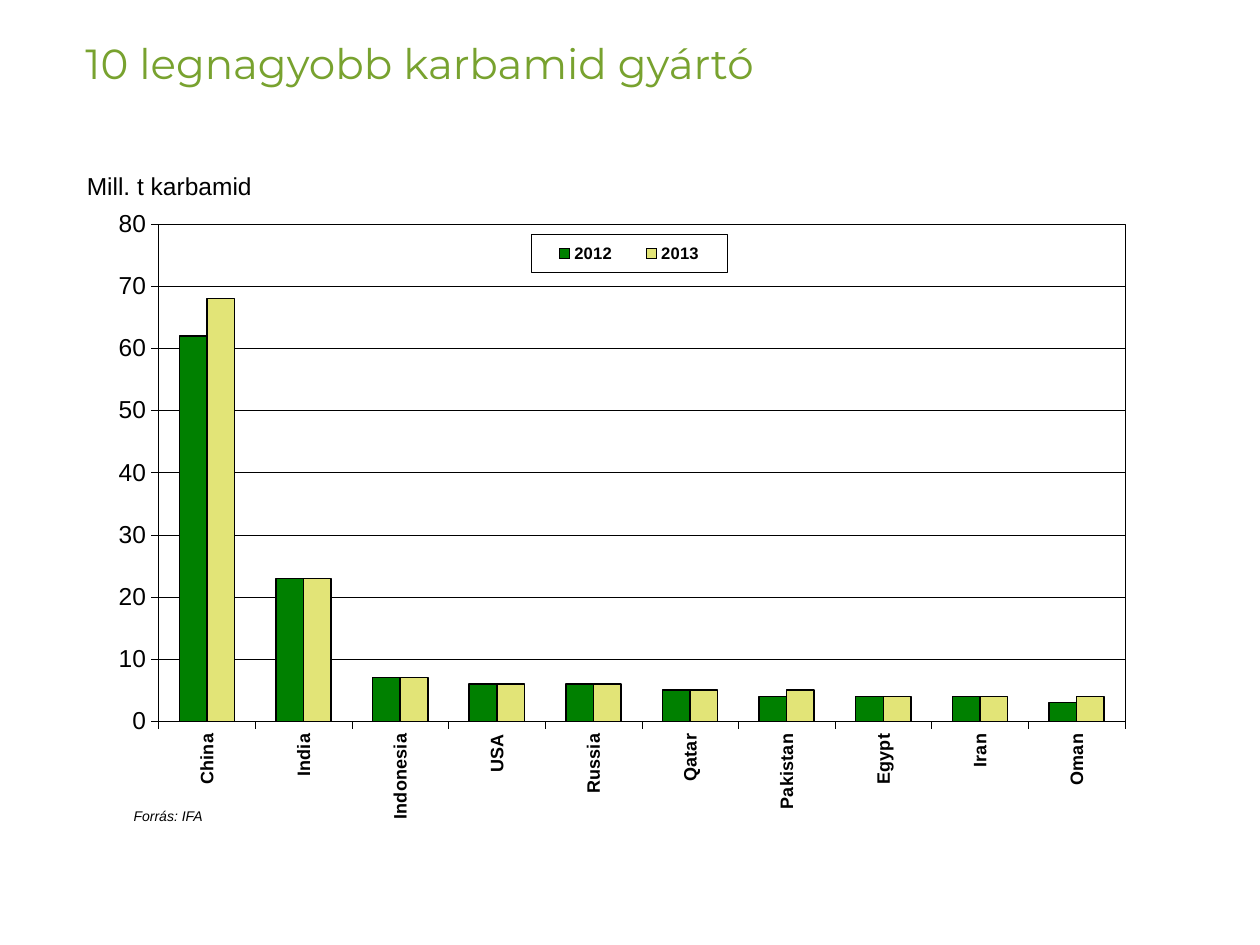
from typing import NamedTuple

from lxml import etree
from pptx import Presentation
from pptx.chart.data import CategoryChartData
from pptx.dml.color import RGBColor
from pptx.enum.chart import XL_CHART_TYPE, XL_LEGEND_POSITION, XL_TICK_MARK
from pptx.enum.text import MSO_ANCHOR
from pptx.oxml import parse_xml
from pptx.oxml.ns import nsdecls, qn
from pptx.util import Inches, Pt

COLUMNS = XL_CHART_TYPE.COLUMN_CLUSTERED
RIGHT = XL_LEGEND_POSITION.RIGHT
OUTSIDE = XL_TICK_MARK.OUTSIDE
TOP = MSO_ANCHOR.TOP

BLACK = RGBColor(0x00, 0x00, 0x00)
TITLE_GREEN = RGBColor(0x78, 0xA2, 0x2F)
DARK_GREEN = RGBColor(0x00, 0x80, 0x00)
PALE_YELLOW = RGBColor(0xE2, 0xE4, 0x77)

SLIDE_WIDTH, SLIDE_HEIGHT = Inches(10), Inches(7.5)
HAIRLINE = 0.22
BAR_OUTLINE = 0.86


class Box(NamedTuple):
    """Left, top, width and height in inches."""
    left: float
    top: float
    width: float
    height: float

    def emu(self) -> list[int]:
        return [Inches(length) for length in self]

    def share_of(self, outer: "Box") -> "Box":
        return Box((self.left - outer.left) / outer.width,
                   (self.top - outer.top) / outer.height,
                   self.width / outer.width, self.height / outer.height)


class Year(NamedTuple):
    name: str
    output: tuple[int, ...]
    color: RGBColor


CHART = Box(0.67, 1.31, 8.3, 5.78)
PLOT = Box(1.26, 1.78, 7.67, 3.95)
LEGEND = Box(4.21, 1.86, 1.56, 0.3)

COUNTRIES = ("China", "India", "Indonesia", "USA", "Russia",
             "Qatar", "Pakistan", "Egypt", "Iran", "Oman")
YEARS = (
    Year("2012", (62, 23, 7, 6, 6, 5, 4, 4, 4, 3), DARK_GREEN),
    Year("2013", (68, 23, 7, 6, 6, 5, 5, 4, 4, 4), PALE_YELLOW),
)


def set_font(font, size: float, color: RGBColor = BLACK, name: str = "Arial",
             bold: bool = False, italic: bool = False) -> None:
    font.name, font.size = name, Pt(size)
    font.bold, font.italic = bold, italic
    font.color.rgb = color


def add_text(slide, text: str, box: Box, wrap: bool = False,
             insets: tuple[float, ...] = (0.1, 0.05, 0.1, 0.05), **style) -> None:
    frame = slide.shapes.add_textbox(*box.emu()).text_frame
    frame.word_wrap = wrap
    frame.vertical_anchor = TOP
    (frame.margin_left, frame.margin_top,
     frame.margin_right, frame.margin_bottom) = map(Inches, insets)
    paragraph = frame.paragraphs[0]
    run = paragraph.add_run()
    run.text = text
    set_font(run.font, **style)


def set_line(line, width: float) -> None:
    line.color.rgb = BLACK
    line.width = Pt(width)


def layout_xml(box: Box, target: str = "") -> etree._Element:
    """Fixed chart layout for a box, as shares of the chart's size."""
    inner = f'<c:layoutTarget val="{target}"/>' if target else ""
    modes = "".join(f'<c:{side}Mode val="edge"/>' for side in "xy")
    shares = "".join(f'<c:{key} val="{share:.3f}"/>'
                     for key, share in zip("xywh", box.share_of(CHART)))
    return parse_xml(f'<c:layout {nsdecls("c")}><c:manualLayout>{inner}{modes}'
                     f'{shares}</c:manualLayout></c:layout>')


def frame_xml() -> etree._Element:
    return parse_xml(
        f'<c:spPr {nsdecls("c", "a")}><a:noFill/><a:ln w="{Pt(HAIRLINE)}">'
        f'<a:solidFill><a:srgbClr val="{BLACK}"/></a:solidFill></a:ln></c:spPr>')


def drop_layout(parent) -> None:
    for layout in parent.findall(qn("c:layout")):
        parent.remove(layout)


def style_axis(axis, size: float, bold: bool) -> None:
    axis.major_tick_mark = OUTSIDE
    set_line(axis.format.line, HAIRLINE)
    set_font(axis.tick_labels.font, size, bold=bold)


def style_legend(chart) -> None:
    chart.has_legend = True
    legend = chart.legend
    legend.position = RIGHT
    legend.include_in_layout = False
    set_font(legend.font, 9.5, bold=True)
    element = legend._element
    drop_layout(element)
    element.find(qn("c:legendPos")).addnext(layout_xml(LEGEND))
    element.find(qn("c:overlay")).addnext(frame_xml())


def add_output_chart(slide) -> None:
    data = CategoryChartData(number_format="0")
    data.categories = COUNTRIES
    for year in YEARS:
        data.add_series(year.name, year.output)
    chart = slide.shapes.add_chart(COLUMNS, *CHART.emu(), data).chart
    chart.has_title = False
    set_font(chart.font, 19.2, name="Montserrat", bold=True)

    plot = chart.plots[0]
    plot.vary_by_categories = False
    plot.gap_width, plot.overlap = 150, 0
    for series, year in zip(plot.series, YEARS):
        series.format.fill.solid()
        series.format.fill.fore_color.rgb = year.color
        set_line(series.format.line, BAR_OUTLINE)

    countries, tonnes = chart.category_axis, chart.value_axis
    style_axis(countries, 10.3, bold=True)
    upright = countries._element.find(qn("c:txPr")).find(qn("a:bodyPr"))
    upright.set("rot", "-5400000")
    upright.set("vert", "horz")
    style_axis(tonnes, 14, bold=False)
    tonnes.minimum_scale, tonnes.maximum_scale, tonnes.major_unit = 0, 80, 10
    tonnes.tick_labels.number_format = "0"
    tonnes.tick_labels.number_format_is_linked = False
    tonnes.has_major_gridlines = True
    set_line(tonnes.major_gridlines.format.line, HAIRLINE)

    plot_area = countries._element.getparent()
    drop_layout(plot_area)
    plot_area.insert(0, layout_xml(PLOT, "inner"))
    plot_area.append(frame_xml())
    style_legend(chart)


def main() -> None:
    deck = Presentation()
    deck.slide_width, deck.slide_height = SLIDE_WIDTH, SLIDE_HEIGHT
    slide = deck.slides.add_slide(deck.slide_layouts[6])
    add_output_chart(slide)
    add_text(slide, "10 legnagyobb karbamid gyártó", Box(0.58, 0.25, 8.83, 0.93),
             wrap=True, size=24, color=TITLE_GREEN, name="Montserrat")
    add_text(slide, "Mill. t karbamid", Box(0.59, 1.31, 1.52, 0.34), size=14)
    add_text(slide, "Forrás: IFA", Box(1.06, 6.37, 0.68, 0.21),
             insets=(0, 0.04, 0.12, 0.04), size=8, italic=True)
    deck.save("out.pptx")


if __name__ == "__main__":
    main()
